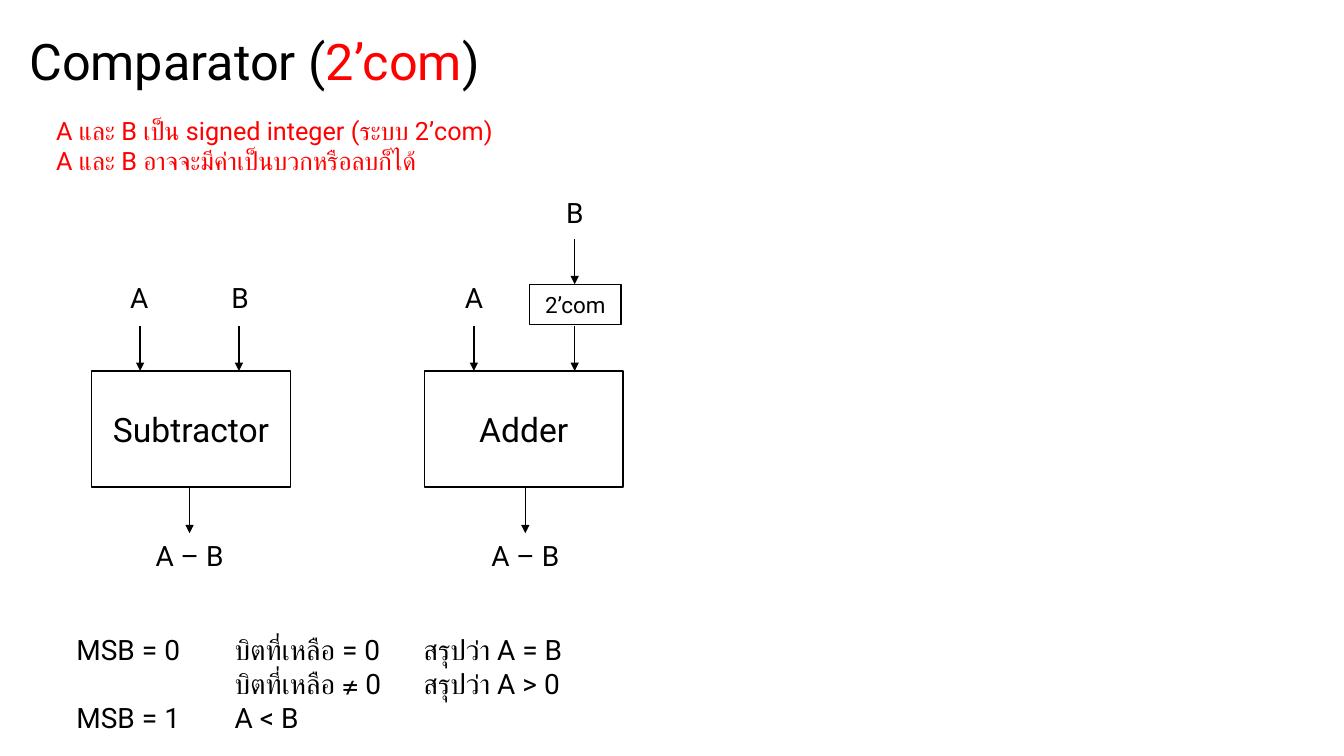
from lxml.etree import SubElement
from pptx import Presentation
from pptx.dml.color import RGBColor
from pptx.enum.shapes import MSO_CONNECTOR, MSO_SHAPE
from pptx.enum.text import MSO_ANCHOR, MSO_AUTO_SIZE, PP_ALIGN
from pptx.oxml.ns import qn
from pptx.util import Inches, Pt

INK = {"black": "000000", "red": "FF0000"}


def write(shape, text, size=20, color="black", align=PP_ALIGN.CENTER,
          anchor=MSO_ANCHOR.TOP, tabs=()):
    frame = shape.text_frame
    frame.word_wrap = True
    frame.auto_size = MSO_AUTO_SIZE.NONE
    frame.vertical_anchor = anchor
    para = frame.paragraphs[0]
    para.text = text
    para.alignment = align
    if tabs:
        stops = SubElement(para._p.get_or_add_pPr(), qn("a:tabLst"))
        for stop in tabs:
            SubElement(stops, qn("a:tab"), pos=str(Inches(stop)), algn="l")
    for run in para.runs:
        run.font.name = "Roboto"
        run.font.size = Pt(size)
        run.font.color.rgb = RGBColor.from_string(INK[color])
    return para


def box(left, top, width, height):
    return [Inches(n) for n in (left, top, width, height)]


deck = Presentation()
deck.slide_width, deck.slide_height = Inches(13.33), Inches(7.5)
slide = deck.slides.add_slide(deck.slide_layouts[5])
shapes = slide.shapes

# Title with its middle part in red
title = shapes.title
title.left, title.top, title.width, title.height = box(0.19, 0.25, 12.8, 0.71)
line = write(title, "Comparator (", size=36, align=PP_ALIGN.LEFT)
for text, color in (("2’com", "red"), (")", "black")):
    run = line.add_run()
    run.text = text
    run.font.name = "Roboto"
    run.font.size = Pt(36)
    run.font.color.rgb = RGBColor.from_string(INK[color])

# Note under the title
note = shapes.add_textbox(*box(0.46, 1.09, 4.96, 0.71))
write(note, "A และ B เป็น signed integer (ระบบ 2’com)\n"
      "A และ B อาจจะมีค่าเป็นบวกหรือลบก็ได้",
      size=18, color="red", align=PP_ALIGN.LEFT)

# Circuit blocks
for text, size, place in (
    ("Subtractor", 24, (0.91, 3.68, 1.97, 1.15)),
    ("Adder", 24, (4.21, 3.68, 1.97, 1.15)),
    ("2’com", 16, (5.25, 2.82, 0.91, 0.4)),
):
    block = shapes.add_shape(MSO_SHAPE.RECTANGLE, *box(*place))
    block.shadow.inherit = False
    block.fill.background()
    block.line.color.rgb = RGBColor.from_string(INK["black"])
    block.line.width = Pt(1)
    write(block, text, size=size, anchor=MSO_ANCHOR.MIDDLE)

# Arrows, each given by its x and its top; all are equally long
for x, top in ((1.39, 3.23), (2.37, 3.23), (1.88, 4.84), (4.7, 3.23),
               (5.7, 2.37), (5.7, 3.23), (5.21, 4.84)):
    arrow = shapes.add_connector(MSO_CONNECTOR.STRAIGHT, Inches(x), Inches(top),
                                 Inches(x), Inches(top + 0.45))
    arrow.line.color.rgb = RGBColor.from_string(INK["black"])
    arrow.line.width = Pt(1)
    SubElement(arrow.line._get_or_add_ln(), qn("a:tailEnd"), type="triangle")
    SubElement(arrow._element.spPr, qn("a:effectLst"))

# Signal names, centred on their arrows
for text, x, top, width in (
    ("A", 1.38, 2.73, 0.42), ("B", 2.38, 2.73, 0.42), ("A – B", 1.88, 5.29, 0.99),
    ("A", 4.7, 2.73, 0.42), ("B", 5.7, 1.89, 0.42), ("A – B", 5.21, 5.29, 0.99),
):
    write(shapes.add_textbox(*box(x - width / 2, top, width, 0.44)), text)

# Rules for reading the result
rules = shapes.add_textbox(*box(0.66, 6.23, 6.17, 1.11))
write(rules, "MSB = 0\tบิตที่เหลือ = 0\tสรุปว่า A = B\n"
      "\tบิตที่เหลือ ≠ 0\tสรุปว่า A > 0\n"
      "MSB = 1\tA < B", align=PP_ALIGN.LEFT, tabs=(1.57, 3.44))

deck.save("out.pptx")
